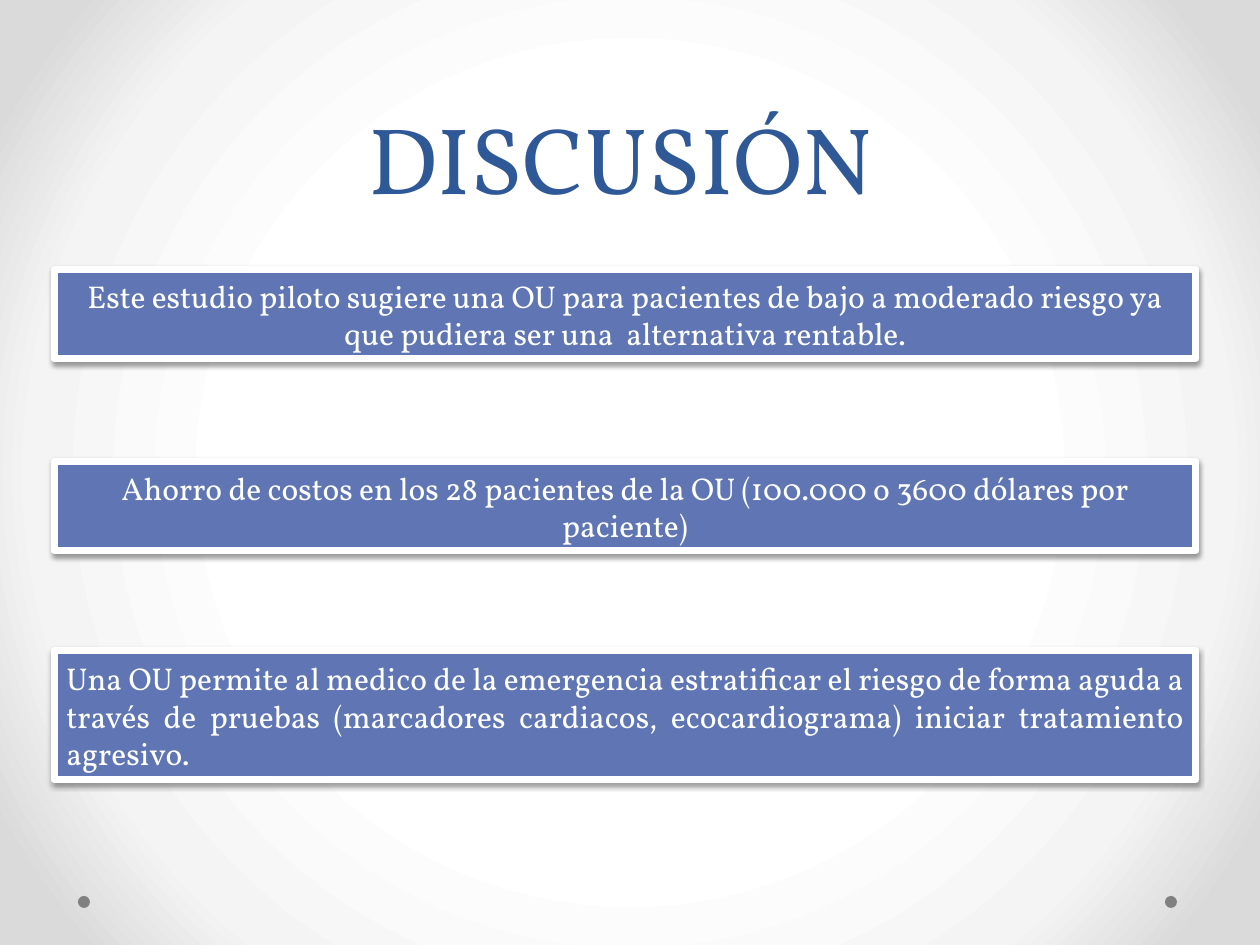
import pptx
import pptx.util
import pptx.dml.color
import pptx.enum.shapes
import pptx.enum.text
import pptx.oxml.ns
from lxml import etree

PX = 914400 / 126
qn = pptx.oxml.ns.qn
ALIGN = pptx.enum.text.PP_ALIGN
ANCHOR = pptx.enum.text.MSO_ANCHOR
SHAPE = pptx.enum.shapes.MSO_SHAPE


def color(value):
    return pptx.dml.color.RGBColor.from_string(value)


def write(shape, text, size, ink, align, anchor):
    frame = shape.text_frame
    frame.word_wrap = True
    frame.vertical_anchor = anchor
    paragraph = frame.paragraphs[0]
    paragraph.alignment = align
    run = paragraph.add_run()
    run.text = text
    run.font.name = "Vollkorn"
    run.font.size = pptx.util.Pt(size)
    run.font.color.rgb = color(ink)
    return paragraph


presentation = pptx.Presentation()
presentation.slide_width = pptx.util.Inches(10)
presentation.slide_height = pptx.util.Inches(7.5)
slide = presentation.slides.add_slide(presentation.slide_layouts[6])

# Background: circular gradient, white in the middle
slide.background.fill.gradient()
gradient = slide.element.find(".//" + qn("a:gradFill"))
for child in list(gradient):
    gradient.remove(child)
stops = etree.SubElement(gradient, qn("a:gsLst"))
for position, value in [(50, "FFFFFF"), (76, "F4F4F4"), (92, "DADADA")]:
    stop = etree.SubElement(stops, qn("a:gs"), pos=str(position * 1000))
    etree.SubElement(stop, qn("a:srgbClr"), val=value)
circle = etree.SubElement(gradient, qn("a:path"), path="circle")
etree.SubElement(circle, qn("a:fillToRect"), l="50000", t="50000", r="50000", b="50000")

# Corner dots
for left in (1165, 78):
    dot = slide.shapes.add_shape(
        SHAPE.OVAL, *[int(n * PX) for n in (left, 896, 12, 12)])
    dot.shadow.inherit = False
    dot.fill.solid()
    dot.fill.fore_color.rgb = color("808080")
    dot.line.fill.background()

# Title
title = slide.shapes.add_textbox(*[int(n * PX) for n in (63, 0, 1134, 220)])
paragraph = write(title, "DISCUSIÓN ", 54, "2F5897", ALIGN.CENTER, ANCHOR.BOTTOM)
paragraph.line_spacing = pptx.util.Pt(58)

# Statement boxes: top, height, alignment, text
statements = [
    (270, 89, ALIGN.CENTER,
     "Este estudio piloto sugiere una OU para pacientes de bajo a moderado riesgo "
     "ya que pudiera ser una  alternativa rentable."),
    (462, 89, ALIGN.CENTER,
     "Ahorro de costos en los 28 pacientes de la OU "
     "(100.000 o 3600 dólares por paciente)"),
    (651, 129, ALIGN.JUSTIFY,
     "Una OU permite al medico de la emergencia estratificar el riesgo de forma "
     "aguda a través de pruebas (marcadores cardiacos, ecocardiograma) iniciar "
     "tratamiento agresivo."),
]
for top, height, align, text in statements:
    box = slide.shapes.add_shape(
        SHAPE.RECTANGLE, *[int(n * PX) for n in (54, top, 1142, height)])
    box.fill.solid()
    box.fill.fore_color.rgb = color("6076B4")
    box.line.color.rgb = color("FFFFFF")
    box.line.width = pptx.util.Pt(4)
    write(box, text, 18, "FFFFFF", align, ANCHOR.MIDDLE)

    # Soft shadow straight below
    box.shadow.inherit = False
    effects = box.element.spPr.find(qn("a:effectLst"))
    shadow = etree.SubElement(
        effects, qn("a:outerShdw"), blurRad=str(pptx.util.Pt(3.1)),
        dist=str(pptx.util.Pt(1.6)), dir="5400000", rotWithShape="0")
    tint = etree.SubElement(shadow, qn("a:srgbClr"), val="000000")
    etree.SubElement(tint, qn("a:alpha"), val="38000")

presentation.save("out.pptx")
